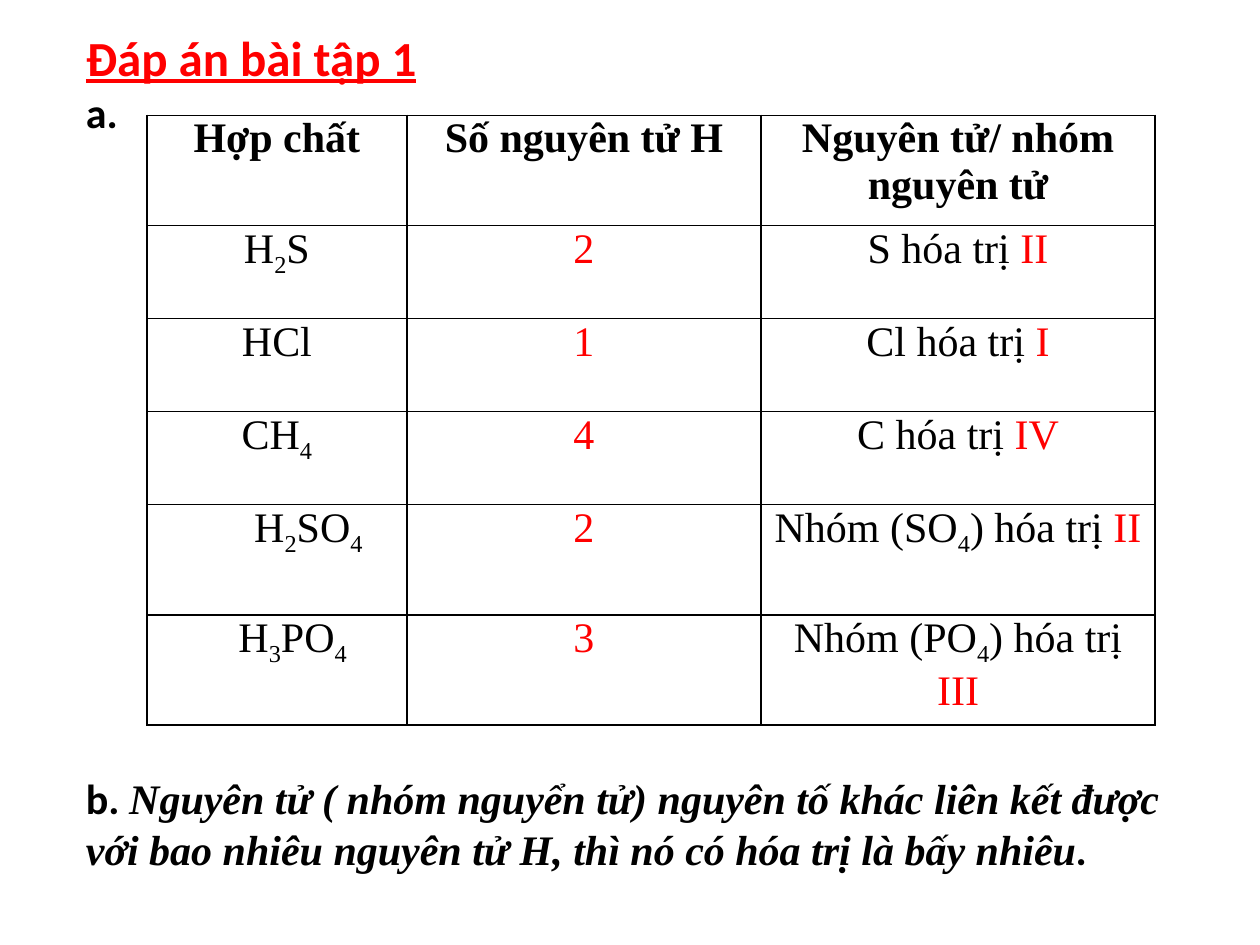
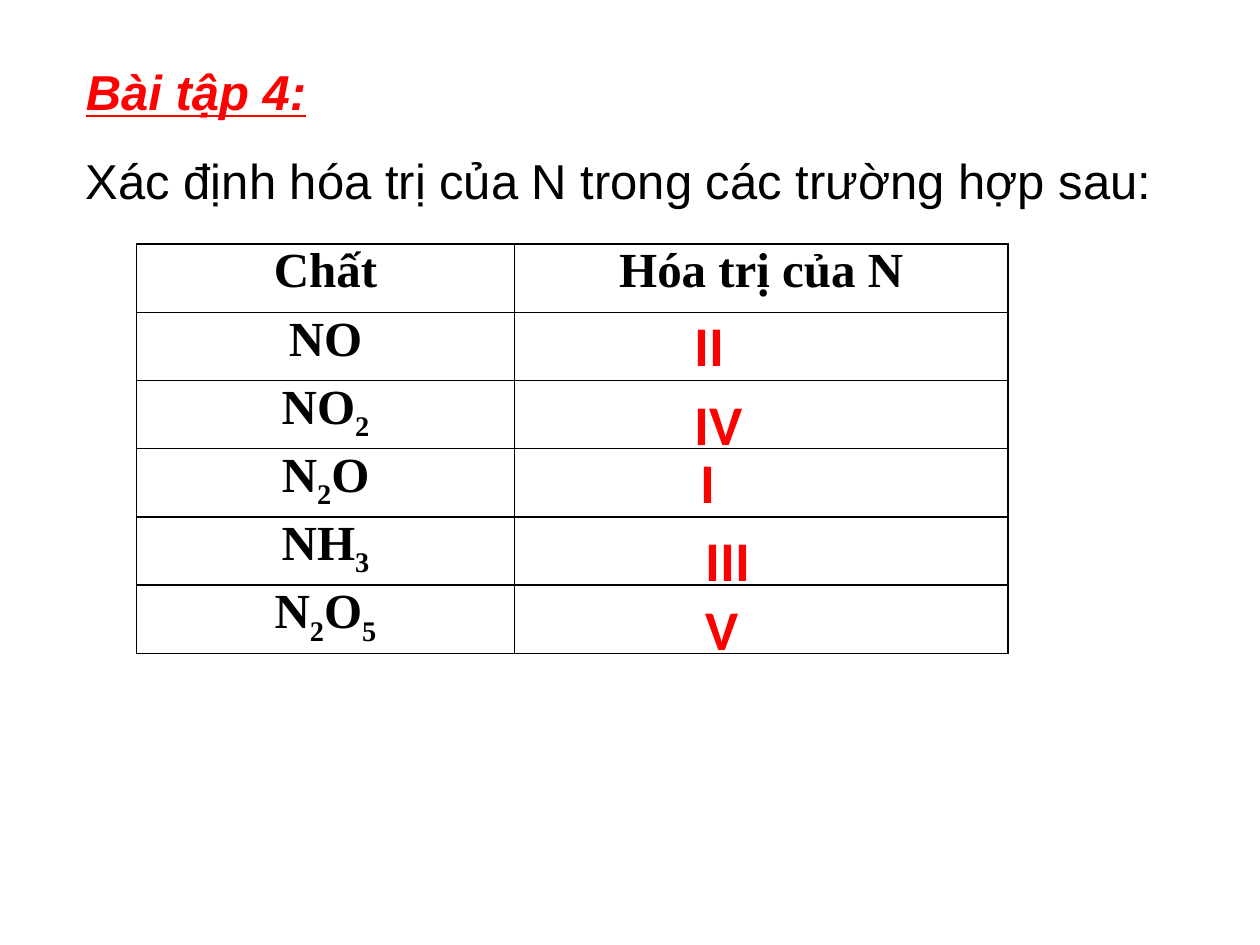
import pptx
import pptx.dml.color
import pptx.enum.text
import pptx.oxml
import pptx.oxml.ns
import pptx.util

RED, BLACK = "FF0000", "000000"
SERIF, SANS = "Times New Roman", "Calibri"
CENTER = pptx.enum.text.PP_ALIGN.CENTER

prs = pptx.Presentation()
prs.slide_width, prs.slide_height = pptx.util.Inches(10), pptx.util.Inches(7.5)
U = prs.slide_width / 120  # the slide is a grid of 120 columns by 90 rows
MARGIN = 7


def write(p, text, color=BLACK, **fmt):
    """Add text to p: |...| marks red answers, _ makes the next character a subscript."""
    for i, part in enumerate(text.split("|")):
        for j, piece in enumerate(part.split("_")):
            cut = 1 if j else 0
            for chunk, lowered in ((piece[:cut], True), (piece[cut:], False)):
                if not chunk:
                    continue
                r = p.add_run()
                r.text = chunk
                for name, value in fmt.items():
                    setattr(r.font, name, value)
                shade = RED if i % 2 else color
                r.font.color.rgb = pptx.dml.color.RGBColor.from_string(shade)
                if lowered:
                    r._r.get_or_add_rPr().set("baseline", "-25000")


def add_grid_table(s, left, top, widths, heights, rows, size, body_bold, indents):
    """Add a black-ruled table; indents maps a first-column text to its left indent in inches."""
    box = [int(v * U) for v in (left, top, sum(widths), sum(heights))]
    table = s.shapes.add_table(len(heights), len(widths), *box).table
    table.first_row = table.horz_banding = False
    for column, width in zip(table.columns, widths):
        column.width = int(width * U)
    for n, (row, height, texts) in enumerate(zip(table.rows, heights, rows)):
        row.height = int(height * U)
        for cell, text in zip(row.cells, texts):
            cell.margin_left = cell.margin_right = pptx.util.Inches(0.07)
            cell.margin_top = cell.margin_bottom = 0
            tcPr = cell._tc.get_or_add_tcPr()
            for side in "LRTB":
                tcPr.append(pptx.oxml.parse_xml(
                    f'<a:ln{side} {pptx.oxml.ns.nsdecls("a")} w="12700"><a:solidFill>'
                    f'<a:srgbClr val="{BLACK}"/></a:solidFill></a:ln{side}>'))
            cell.fill.background()
            p = cell.text_frame.paragraphs[0]
            p.alignment = CENTER
            if text in indents:
                p._p.get_or_add_pPr().set("marL", str(pptx.util.Inches(indents[text])))
            write(p, text, name=SERIF, size=pptx.util.Pt(size), bold=n == 0 or body_bold)


# Slide 1: answers to exercise 1
s = prs.slides.add_slide(prs.slide_layouts[6])
tf = s.shapes.add_textbox(*[int(v * U) for v in (MARGIN, 2, 90, 11.75)]).text_frame
tf.word_wrap = True
write(tf.paragraphs[0], "Đáp án bài tập 1", RED, name=SANS, size=pptx.util.Pt(28),
      bold=True, underline=True)
write(tf.add_paragraph(), "a.", name=SANS, size=pptx.util.Pt(24), bold=True)

compounds = [
    ("Hợp chất", "Số nguyên tử H", "Nguyên tử/ nhóm nguyên tử"),
    ("H_2S", "|2|", "S hóa trị |II|"),
    ("HCl", "|1|", "Cl hóa trị |I|"),
    ("CH_4", "|4|", "C hóa trị |IV|"),
    ("H_2SO_4", "|2|", "Nhóm (SO_4) hóa trị |II|"),
    ("H_3PO_4", "|3|", "Nhóm (PO_4) hóa trị |III|"),
]
add_grid_table(s, 2 * MARGIN, 11, [24.75, 33.75, 37.5], [10.5] + [8.86] * 3 + [10.5] * 2,
               compounds, 24, False, {"H_2SO_4": 0.5, "H_3PO_4": 0.25})

tf = s.shapes.add_textbox(*[int(v * U) for v in (MARGIN, 73, 106, 11)]).text_frame
tf.word_wrap = True
conclusion = ("Nguyên tử ( nhóm nguyển tử) nguyên tố khác liên kết được với bao nhiêu "
              "nguyên tử H, thì nó có hóa trị là bấy nhiêu")
for text, font, italic in (("b. ", SANS, False), (conclusion, SERIF, True), (".", SANS, True)):
    write(tf.paragraphs[0], text, name=font, size=pptx.util.Pt(24), bold=True, italic=italic)

# Slide 2: exercise 4
s = prs.slides.add_slide(prs.slide_layouts[6])
nitrogen = [("Chất", "Hóa trị của N")]
nitrogen += [(formula, "") for formula in ("NO", "NO_2", "N_2O", "NH_3", "N_2O_5")]
add_grid_table(s, 13, 23.25, [36, 47], [6.5] * 6, nitrogen, 28, True, {})

tf = s.shapes.add_textbox(*[int(v * U) for v in (MARGIN, 2.5, 109, 18)]).text_frame
tf.word_wrap = True
task = tf.paragraphs[0], tf.add_paragraph()
for p in task:
    p.line_spacing = 1.5
write(task[0], "Bài tập 4:", RED, name="Arial", size=pptx.util.Pt(28), bold=True,
      italic=True, underline=True)
write(task[1], "Xác định hóa trị của N trong các trường hợp sau:", name="Arial",
      size=pptx.util.Pt(28))

for valence, left, top, width in (("II", 65, 29, 6), ("IV", 65, 36.5, 11.5), ("I", 65.5, 42, 6),
                                  ("III", 66, 49.5, 14), ("V", 66, 56, 6)):
    tf = s.shapes.add_textbox(*[int(v * U) for v in (left, top, width, 7.7)]).text_frame
    tf.word_wrap = True
    write(tf.paragraphs[0], valence, RED, name=SANS, size=pptx.util.Pt(32), bold=True)

prs.save("out.pptx")
